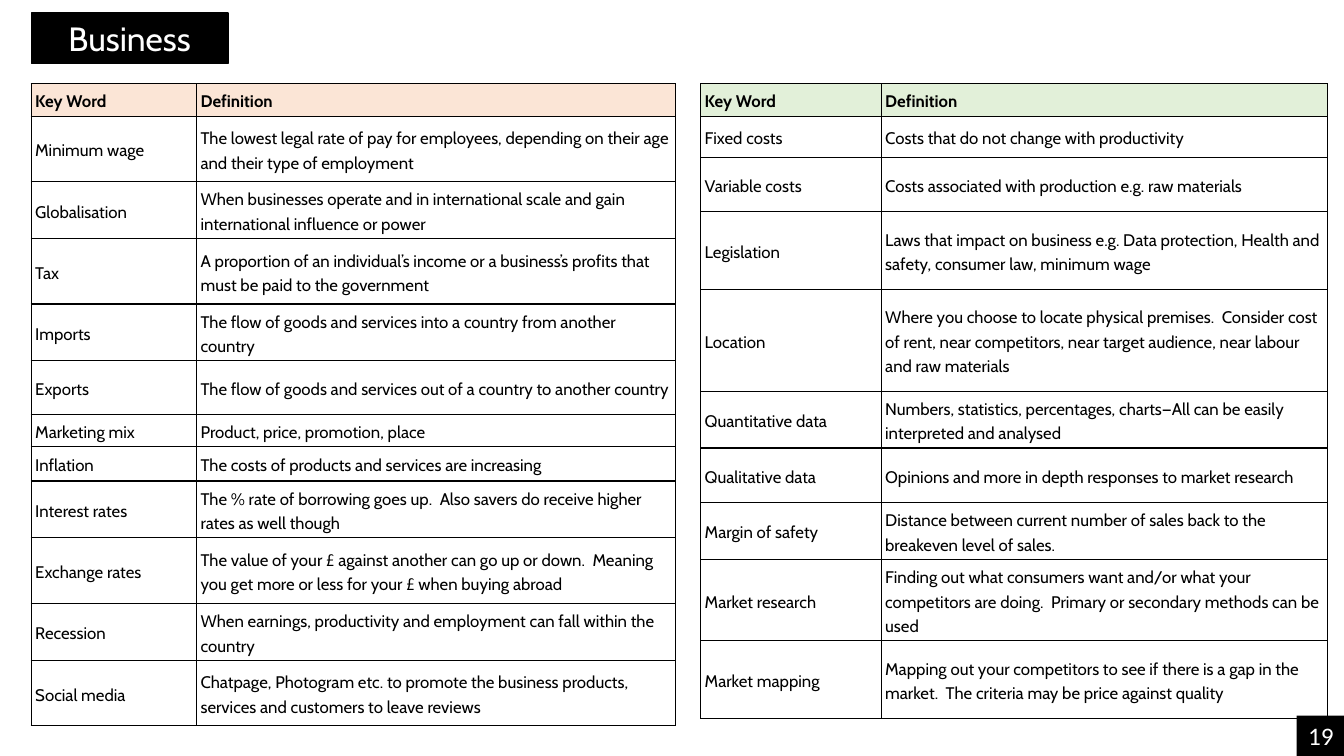
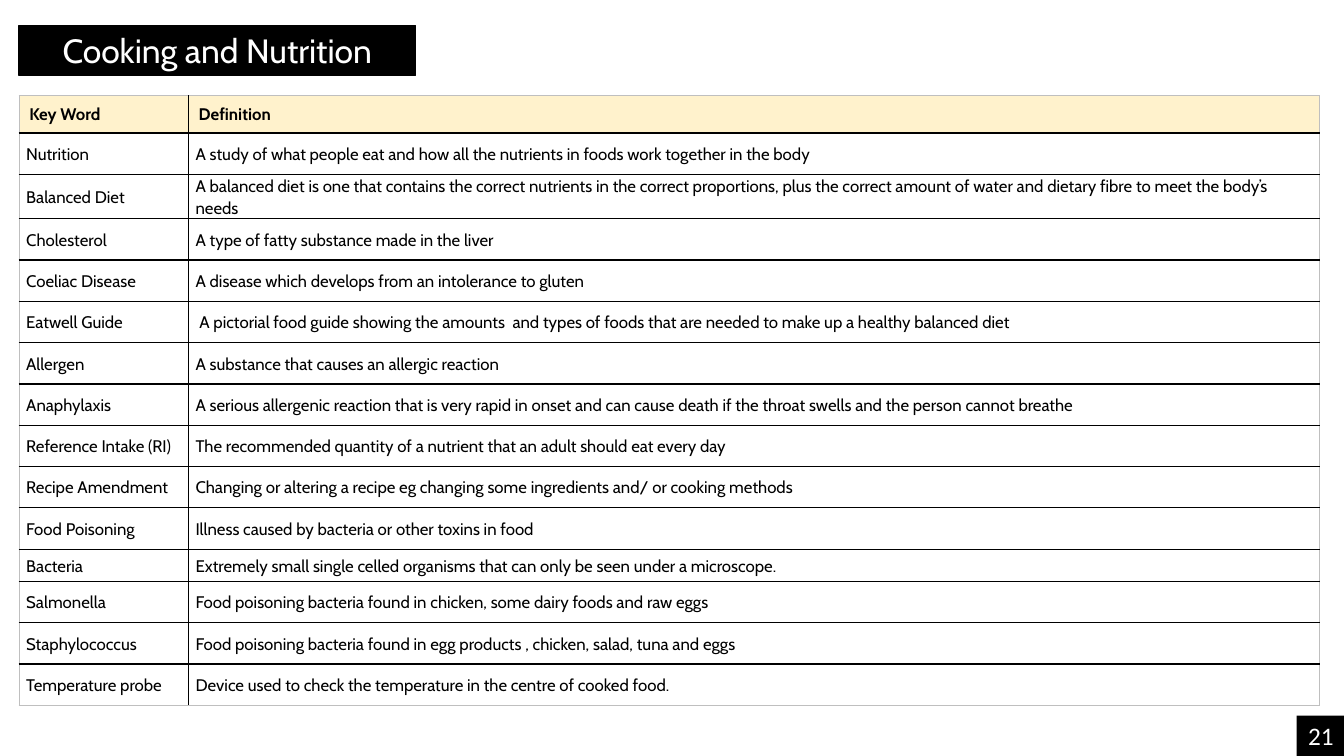
from dataclasses import dataclass

from lxml.etree import SubElement
from pptx import Presentation
from pptx.dml.color import RGBColor
from pptx.enum.shapes import MSO_SHAPE
from pptx.enum.text import MSO_ANCHOR, MSO_AUTO_SIZE, PP_ALIGN
from pptx.oxml.ns import qn
from pptx.util import Inches, Pt


# Shared style
@dataclass(frozen=True)
class Theme:
    font: str = "Cabin"
    number_font: str = "Calibri"
    title_size: int = 24
    number_size: int = 18
    cell_size: int = 12
    black: str = "000000"
    white: str = "FFFFFF"
    grey: str = "BFBFBF"
    peach: str = "FBE5D6"
    green: str = "E2F0D9"
    cream: str = "FFF2CC"


@dataclass(frozen=True)
class CellStyle:
    margin_x: float
    margin_y: float
    line_spacing: float
    space_after: int = 0
    anchor: MSO_ANCHOR = MSO_ANCHOR.MIDDLE


THEME = Theme()
HEADINGS = ("Key Word", "Definition")
SPACED_HEAD = CellStyle(0.04, 0.04, 1.19, 6, MSO_ANCHOR.TOP)
SPACED_BODY = CellStyle(0.04, 0.04, 1.19, 6)
COMPACT_HEAD = CellStyle(0.1, 0.05, 1.0)
COMPACT_BODY = CellStyle(0.07, 0, 1.07)


def rgb(color):
    return RGBColor.from_string(color)


class Deck:
    def __init__(self, theme):
        self.theme = theme
        self.prs = Presentation()
        self.prs.slide_width, self.prs.slide_height = Inches(13.33), Inches(7.5)
        self.s = None

    def add_slide(self, title, left, top, width, number):
        self.s = self.prs.slides.add_slide(self.prs.slide_layouts[5])
        self.title(title, left, top, width)
        self.number = number

    def font(self, p, size, color, name=None, bold=False):
        p.font.name = name or self.theme.font
        p.font.size = Pt(size)
        p.font.bold = bold
        p.font.color.rgb = rgb(color)

    def fill_black(self, sp):
        sp.fill.solid()
        sp.fill.fore_color.rgb = rgb(self.theme.black)

    def title(self, text, left, top, width):
        sp = self.s.shapes.title
        sp.left, sp.top = Inches(left), Inches(top)
        sp.width, sp.height = Inches(width), Inches(0.5)
        self.fill_black(sp)
        sp.line.color.rgb = rgb(self.theme.black)
        sp.line.width = Pt(1)
        tf = sp.text_frame
        tf.text = text
        tf.auto_size = MSO_AUTO_SIZE.NONE
        tf.vertical_anchor = MSO_ANCHOR.MIDDLE
        p = tf.paragraphs[0]
        p.alignment = PP_ALIGN.CENTER
        self.font(p, self.theme.title_size, self.theme.white)

    def page_number(self):
        sp = self.s.shapes.add_shape(MSO_SHAPE.RECTANGLE, Inches(12.86),
                                     Inches(7.1), Inches(0.48), Inches(0.4))
        sp.shadow.inherit = False
        self.fill_black(sp)
        sp.line.fill.background()
        tf = sp.text_frame
        tf.text = str(self.number)
        p = tf.paragraphs[0]
        p.alignment = PP_ALIGN.CENTER
        self.font(p, self.theme.number_size, self.theme.white,
                  self.theme.number_font)

    def borders(self, cell, colors):
        tc_pr = cell._tc.get_or_add_tcPr()
        for i, (side, color) in enumerate(zip("LRTB", colors)):
            ln = SubElement(tc_pr, qn(f"a:ln{side}"), w=str(Pt(1)))
            fill = SubElement(ln, qn("a:solidFill"))
            SubElement(fill, qn("a:srgbClr"), val=color)
            tc_pr.insert(i, ln)

    def cell(self, cell, text, style, fill=None):
        cell.margin_left = cell.margin_right = Inches(style.margin_x)
        cell.margin_top = cell.margin_bottom = Inches(style.margin_y)
        cell.vertical_anchor = style.anchor
        if fill:
            cell.fill.solid()
            cell.fill.fore_color.rgb = rgb(fill)
        else:
            cell.fill.background()
        cell.text = text
        p = cell.text_frame.paragraphs[0]
        p.line_spacing = style.line_spacing
        p.space_after = Pt(style.space_after)
        self.font(p, self.theme.cell_size, self.theme.black, bold=bool(fill))

    def glossary(self, left, top, widths, head_height, entries, head_fill,
                 head_style, body_style, edge):
        """Entries are (row height, key word, definition)."""
        rows = [(head_height, *HEADINGS), *entries]
        heights = [row[0] for row in rows]
        table = self.s.shapes.add_table(
            len(rows), len(widths), Inches(left), Inches(top),
            Inches(sum(widths)), Inches(sum(heights))).table
        table.first_row = table.horz_banding = False
        for column, width in zip(table.columns, widths):
            column.width = Inches(width)
        last_row, last_col = len(rows) - 1, len(widths) - 1
        for r, (height, *texts) in enumerate(rows):
            table.rows[r].height = Inches(height)
            style, fill = (body_style, None) if r else (head_style, head_fill)
            for c, text in enumerate(texts):
                cell = table.cell(r, c)
                self.cell(cell, text, style, fill)
                outer = (c == 0, c == last_col, r == 0, r == last_row)
                self.borders(cell, [edge if out else self.theme.black
                                    for out in outer])


# Content
BUSINESS_TERMS = [
    (0.65, "Minimum wage", "The lowest legal rate of pay for employees, depending on their age and their type of employment"),
    (0.55, "Globalisation", "When businesses operate and in international scale and gain international influence or power"),
    (0.65, "Tax", "A proportion of an individual’s income or a business’s profits that must be paid to the government"),
    (0.55, "Imports", "The flow of goods and services into a country from another country"),
    (0.53, "Exports", "The flow of goods and services out of a country to another country"),
    (0.31, "Marketing mix", "Product, price, promotion, place"),
    (0.34, "Inflation", "The costs of products and services are increasing"),
    (0.55, "Interest rates", "The % rate of borrowing goes up.  Also savers do receive higher rates as well though"),
    (0.65, "Exchange rates", "The value of your £ against another can go up or down.  Meaning you get more or less for your £ when buying abroad"),
    (0.55, "Recession", "When earnings, productivity and employment can fall within the country"),
    (0.65, "Social media", "Chatpage, Photogram etc. to promote the business products, services and customers to leave reviews"),
]
MARKET_TERMS = [
    (0.41, "Fixed costs", "Costs that do not change with productivity"),
    (0.54, "Variable costs", "Costs associated with production e.g. raw materials"),
    (0.77, "Legislation", "Laws that impact on business e.g. Data protection, Health and safety, consumer law, minimum wage"),
    (1.01, "Location", "Where you choose to locate physical premises.  Consider cost of rent, near competitors, near target audience, near labour and raw materials"),
    (0.56, "Quantitative data", "Numbers, statistics, percentages, charts—All can be easily interpreted and analysed"),
    (0.54, "Qualitative data", "Opinions and more in depth responses to market research"),
    (0.56, "Margin of safety", "Distance between current number of sales back to the breakeven level of sales."),
    (0.8, "Market research", "Finding out what consumers want and/or what your competitors are doing.  Primary or secondary methods can be used"),
    (0.77, "Market mapping", "Mapping out your competitors to see if there is a gap in the market.  The criteria may be price against quality"),
]
FOOD_TERMS = [
    (0.41, "Nutrition", "A study of what people eat and how all the nutrients in foods work together in the body"),
    (0.44, "Balanced Diet", "A balanced diet is one that contains the correct nutrients in the correct proportions, plus the correct amount of water and dietary fibre to meet the body’s needs"),
    (0.41, "Cholesterol", "A type of fatty substance made in the liver"),
    (0.41, "Coeliac Disease", "A disease which develops from an intolerance to gluten"),
    (0.41, "Eatwell Guide", " A pictorial food guide showing the amounts  and types of foods that are needed to make up a healthy balanced diet"),
    (0.41, "Allergen", "A substance that causes an allergic reaction"),
    (0.41, "Anaphylaxis", "A serious allergenic reaction that is very rapid in onset and can cause death if the throat swells and the person cannot breathe"),
    (0.41, "Reference Intake (RI)", "The recommended quantity of a nutrient that an adult should eat every day"),
    (0.41, "Recipe Amendment", "Changing or altering a recipe eg changing some ingredients and/ or cooking methods"),
    (0.41, "Food Poisoning", "Illness caused by bacteria or other toxins in food"),
    (0.32, "Bacteria", "Extremely small single celled organisms that can only be seen under a microscope."),
    (0.41, "Salmonella", "Food poisoning bacteria found in chicken, some dairy foods and raw eggs"),
    (0.41, "Staphylococcus", "Food poisoning bacteria found in egg products , chicken, salad, tuna and eggs"),
    (0.41, "Temperature probe", "Device used to check the temperature in the centre of cooked food."),
]


def main():
    deck = Deck(THEME)

    # Business
    deck.add_slide("Business", 0.31, 0.13, 1.95, 19)
    deck.glossary(0.31, 0.83, (1.64, 4.75), 0.31, BUSINESS_TERMS, THEME.peach,
                  SPACED_HEAD, SPACED_BODY, THEME.black)
    deck.glossary(6.95, 0.83, (1.79, 4.43), 0.32, MARKET_TERMS, THEME.green,
                  SPACED_HEAD, SPACED_BODY, THEME.black)
    deck.page_number()

    # Cooking and Nutrition
    deck.add_slide("Cooking and Nutrition", 0.19, 0.25, 3.93, 21)
    deck.glossary(0.19, 0.95, (1.68, 11.22), 0.37, FOOD_TERMS, THEME.cream,
                  COMPACT_HEAD, COMPACT_BODY, THEME.grey)
    deck.page_number()

    deck.prs.save("out.pptx")


if __name__ == "__main__":
    main()
